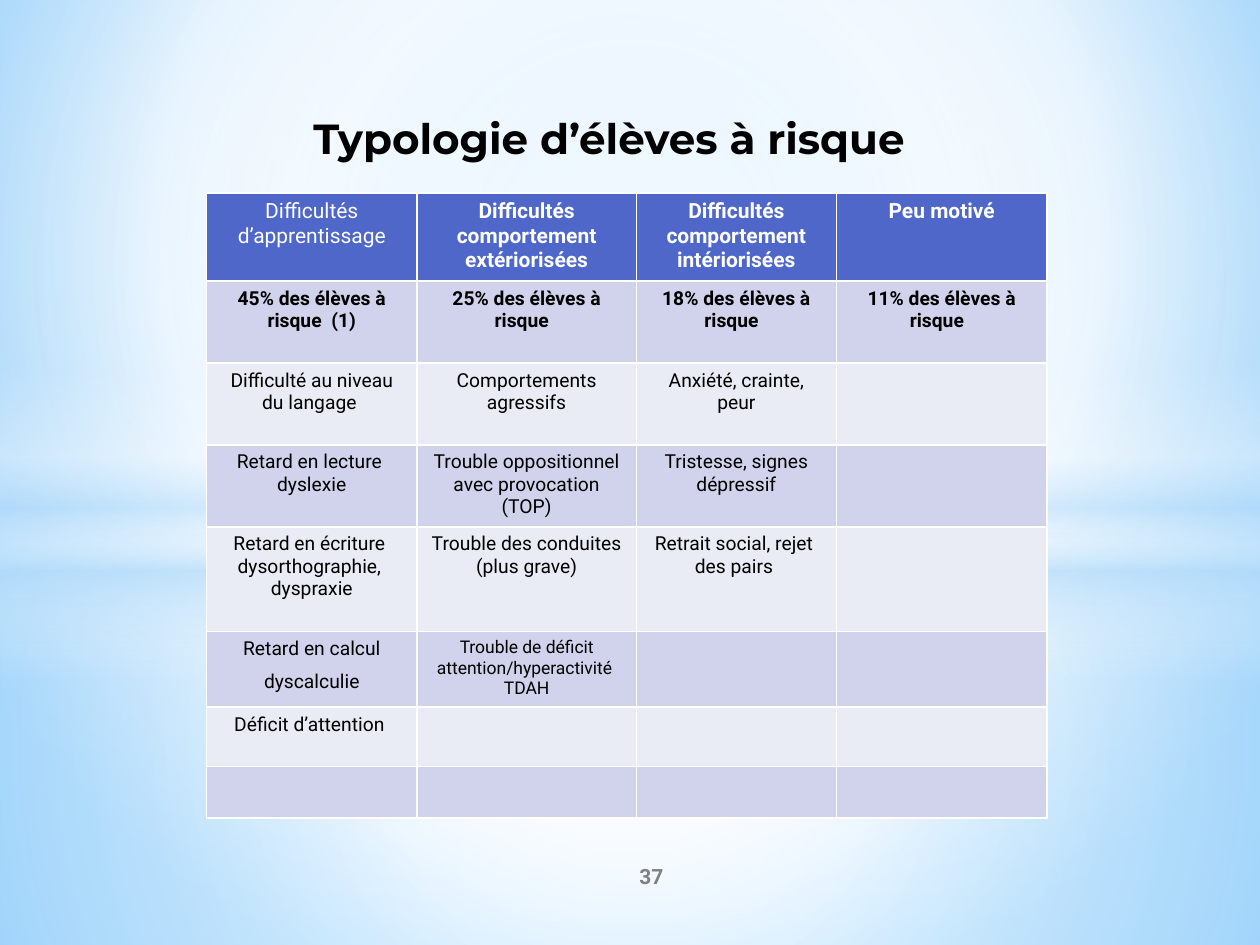
import pptx
import pptx.util
import pptx.dml.color
import pptx.enum.shapes
import pptx.enum.text
import pptx.oxml
import pptx.oxml.ns

Inches, Pt = pptx.util.Inches, pptx.util.Pt
SHAPE = pptx.enum.shapes.MSO_SHAPE
CENTER = pptx.enum.text.PP_ALIGN.CENTER
MIDDLE = pptx.enum.text.MSO_ANCHOR.MIDDLE

BACKGROUND = [(0, "9ED5FF", 100), (60, "FFFFFF", 100), (100, "5BB9FF", 100)]
CENTRE = (50, 50, 50, 50)
GLOWS = [
    (SHAPE.RECTANGLE, (0, 4.23, 10, 3.27),
     [(0, "FFFFFF", 91), (37, "FFFFFF", 76), (100, "B4DCFA", 79)], CENTRE),
    (SHAPE.RECTANGLE, (0, 0, 10, 4.23),
     [(0, "FFFFFF", 89), (48, "FFFFFF", 62), (100, "B4DCFA", 79)], CENTRE),
    (SHAPE.RECTANGLE, (0, 2.9, 10, 2.5),
     [(0, "FFFFFF", 0), (29, "FFFFFF", 30), (45, "B4DCFA", 40),
      (55, "FFFFFF", 26), (65, "B4DCFA", 60), (100, "FFFFFF", 0)], None),
    (SHAPE.OVAL, (0, 1.75, 10, 5.58),
     [(0, "FFFFFF", 100), (54, "FFFFFF", 0)], CENTRE),
]
TITLE = "Typologie d’élèves à risque "
PAGE = "37"
ROWS = [
    ["Difficultés d’apprentissage", "Difficultés comportement extériorisées",
     "Difficultés comportement intériorisées", "Peu motivé"],
    ["45% des élèves à risque  (1)", "25% des élèves à risque  ",
     "18% des élèves à risque  ", "11% des élèves à risque  "],
    ["Difficulté au niveau du langage ", "Comportements agressifs", "Anxiété, crainte, peur", ""],
    ["Retard en lecture  dyslexie", "Trouble oppositionnel avec provocation (TOP)",
     "Tristesse, signes dépressif", ""],
    ["Retard en écriture  dysorthographie,  dyspraxie", "Trouble des conduites (plus grave)",
     "Retrait social, rejet \vdes pairs ", ""],
    ["Retard en calcul\ndyscalculie", "Trouble de déficit\nattention/hyperactivité \vTDAH", "", ""],
    ["Déficit d’attention ", "", "", ""],
    ["", "", "", ""],
]
WIDTHS = [1.67, 1.74, 1.59, 1.67]
HEIGHTS = [0.7, 0.65, 0.65, 0.65, 0.83, 0.6, 0.47, 0.41]
HEADER, BANDS = "4E67C8", ("E9EBF5", "D0D3EB")
SMALL_CELL, SPACED_CELL = (5, 1), (5, 0)


def rgb(value):
    return pptx.dml.color.RGBColor.from_string(value)


def gradient(props, stops, focus):
    gs = "".join(
        f'<a:gs pos="{pos * 1000}"><a:srgbClr val="{color}">'
        f'<a:alpha val="{alpha * 1000}"/></a:srgbClr></a:gs>'
        for pos, color, alpha in stops)
    if focus:
        edges = " ".join(f'{side}="{v * 1000}"' for side, v in zip("ltrb", focus))
        shade = f'<a:path path="circle"><a:fillToRect {edges}/></a:path>'
    else:
        shade = '<a:lin ang="5400000" scaled="0"/>'
    solid = props.find(pptx.oxml.ns.qn("a:solidFill"))
    props.replace(solid, pptx.oxml.parse_xml(
        f'<a:gradFill {pptx.oxml.ns.nsdecls("a")} rotWithShape="1">'
        f'<a:gsLst>{gs}</a:gsLst>{shade}</a:gradFill>'))


def style(p, size, color, bold, font="Roboto"):
    p.alignment = CENTER
    p.font.name, p.font.size, p.font.bold = font, Pt(size), bold
    p.font.color.rgb = rgb(color)


def add_text(s, box, text, size, color, font):
    tf = s.shapes.add_textbox(*map(Inches, box)).text_frame
    tf.word_wrap = True
    tf.text = text
    style(tf.paragraphs[0], size, color, True, font)
    return tf


def add_borders(cell):
    tcPr = cell._tc.get_or_add_tcPr()
    for side in "LRTB":
        tcPr.append(pptx.oxml.parse_xml(
            f'<a:ln{side} {pptx.oxml.ns.nsdecls("a")} w="{Pt(1)}"><a:solidFill>'
            f'<a:srgbClr val="FFFFFF"/></a:solidFill></a:ln{side}>'))


def add_table(s):
    table = s.shapes.add_table(len(ROWS), len(WIDTHS), Inches(1.64), Inches(1.53),
                               Inches(sum(WIDTHS)), Inches(sum(HEIGHTS))).table
    for col, width in zip(table.columns, WIDTHS):
        col.width = Inches(width)
    for i, (row, height) in enumerate(zip(ROWS, HEIGHTS)):
        table.rows[i].height = Inches(height)
        for j, text in enumerate(row):
            cell = table.cell(i, j)
            add_borders(cell)
            cell.fill.solid()
            cell.fill.fore_color.rgb = rgb(BANDS[i % 2] if i else HEADER)
            cell.text_frame.text = text
            size = 10 if (i, j) == SMALL_CELL else 11 if i else 12
            bold = i == 1 or (i == 0 and j > 0)
            for p in cell.text_frame.paragraphs:
                style(p, size, "000000" if i else "FFFFFF", bold)
            if (i, j) == SPACED_CELL:
                p.space_before = Pt(6)


def main():
    prs = pptx.Presentation()
    prs.slide_width, prs.slide_height = Inches(10), Inches(7.5)
    s = prs.slides.add_slide(prs.slide_layouts[6])
    s.background.fill.solid()
    gradient(s._element.cSld.bg.bgPr, BACKGROUND, (20, 10, 20, 60))
    for kind, box, stops, focus in GLOWS:
        sp = s.shapes.add_shape(kind, *map(Inches, box))
        sp.shadow.inherit = False
        sp.line.fill.background()
        sp.fill.solid()
        gradient(sp._element.spPr, stops, focus)
    tf = add_text(s, (4.17, 6.75, 2, 0.4), PAGE, 12, "808080", "Roboto")
    tf.vertical_anchor = MIDDLE
    add_text(s, (0.98, 0.84, 7.8, 0.5), TITLE, 24, "000000", "Montserrat")
    add_table(s)
    prs.save("out.pptx")


if __name__ == "__main__":
    main()
